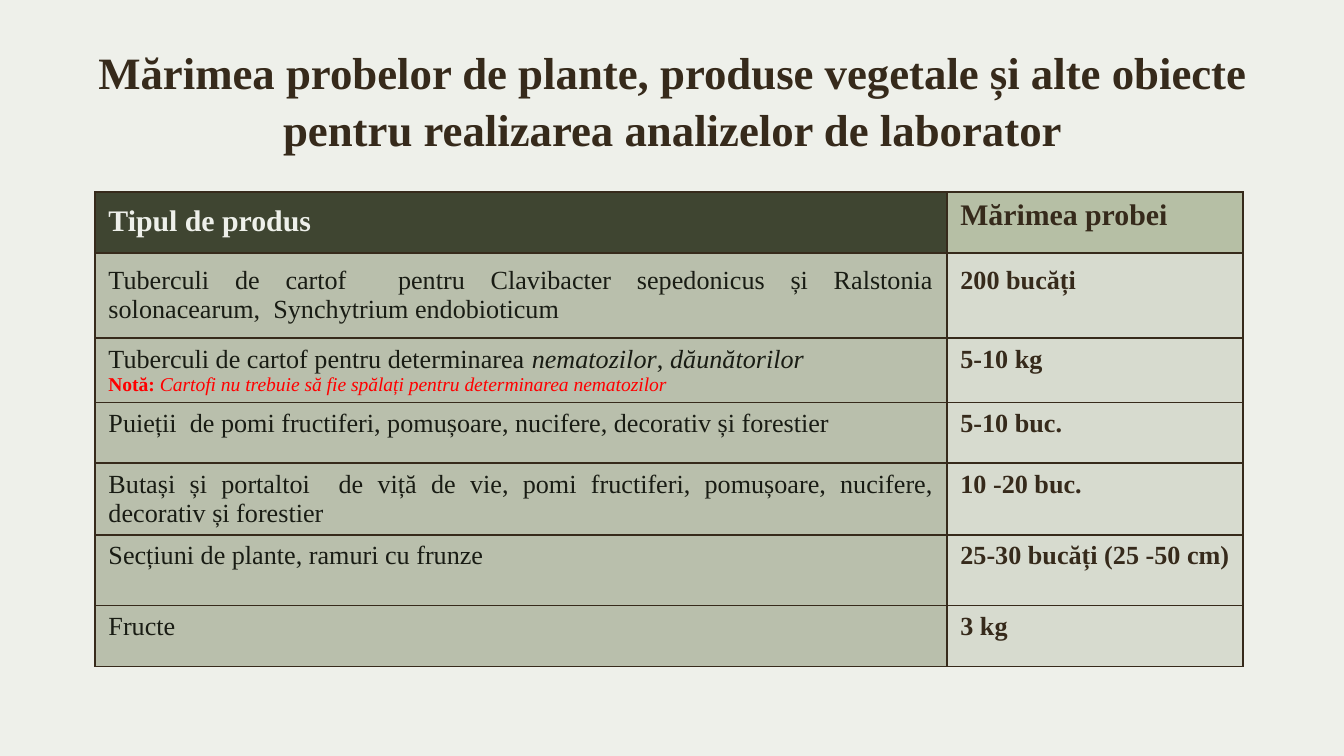
from lxml.etree import SubElement
from pptx import Presentation
from pptx.dml.color import RGBColor
from pptx.enum.text import MSO_ANCHOR as Anchor, PP_ALIGN as Align
from pptx.oxml.ns import qn
from pptx.util import Cm, Pt

FONT = "Times New Roman"
PAPER, BROWN, INK, RED = "EEF0EA", "362A1B", "191C14", "FF0000"
DARK, SAGE, OLIVE = "3F4531", "B6BFA5", "727C57"

TITLE = ("Mărimea probelor de plante, produse vegetale și alte obiecte "
         "pentru realizarea analizelor de laborator")
HEADINGS = [("Tipul de produs", PAPER, DARK, 0.25), ("Mărimea probei", BROWN, SAGE, 0.13)]
HEADING_HEIGHT = 1.15
ITALIC = {"italic": True}
NOTE = {"size": 10.5, "color": RED}

SAMPLES = [
    ([[("Tuberculi de cartof  pentru Clavibacter sepedonicus și Ralstonia "
        "solonacearum,  Synchytrium endobioticum", {})]], "200 bucăți", 1.61, 0.25),
    ([[("Tuberculi de cartof pentru determinarea ", {}), ("nematozilor", ITALIC),
       (", ", {}), ("dăunătorilor", ITALIC)],
      [("Notă: ", NOTE | {"bold": True}),
       ("Cartofi nu trebuie să fie spălați pentru determinarea nematozilor", NOTE | ITALIC)]],
     "5-10 kg", 1.21, 0.13),
    ([[("Puieții  de pomi fructiferi, pomușoare, nucifere, decorativ și forestier", {})]],
     "5-10 buc.", 1.15, 0.13),
    ([[("Butași și portaltoi  de viță de vie, pomi fructiferi, pomușoare, nucifere, "
        "decorativ și forestier", {})]], "10 -20 buc.", 1.34, 0.13),
    ([[("Secțiuni de plante, ramuri cu frunze", {})]], "25-30 bucăți (25 -50 cm)", 1.34, 0.13),
    ([[("Fructe", {})]], "3 kg", 1.15, 0.13),
]
COLUMN_WIDTHS = [16.1, 5.59]


def rgb(value):
    return RGBColor.from_string(value)


def write(paragraph, text, size=14, color=INK, bold=False, italic=False, align=Align.LEFT):
    paragraph.alignment = align
    run = paragraph.add_run()
    run.text = text
    font = run.font
    font.name, font.size, font.bold, font.italic = FONT, Pt(size), bold, italic
    font.color.rgb = rgb(color)


def style_cell(cell, color, inset, opacity=100):
    cell.margin_left = cell.margin_right = Cm(0.25)
    cell.margin_top = cell.margin_bottom = Cm(inset)
    properties = cell._tc.get_or_add_tcPr()
    for side in ("a:lnL", "a:lnR", "a:lnT", "a:lnB"):
        border = SubElement(properties, qn(side), w=str(Pt(1)))
        SubElement(SubElement(border, qn("a:solidFill")), qn("a:srgbClr"), val=BROWN)
    cell.fill.solid()
    cell.fill.fore_color.rgb = rgb(color)
    if opacity < 100:
        tint = properties.find(qn("a:solidFill")).find(qn("a:srgbClr"))
        SubElement(tint, qn("a:alpha"), val=str(opacity * 1000))


def add_title(slide):
    title = slide.shapes.title
    title.left, title.top, title.width, title.height = Cm(1.14), Cm(0.55), Cm(23.14), Cm(1.6)
    frame = title.text_frame
    frame.word_wrap = True
    frame.vertical_anchor = Anchor.TOP
    frame.margin_left = frame.margin_right = frame.margin_top = frame.margin_bottom = Cm(0.25)
    heading = frame.paragraphs[0]
    heading.line_spacing = 1.05
    write(heading, TITLE, size=24, color=BROWN, bold=True, align=Align.CENTER)


def add_samples(slide):
    heights = [HEADING_HEIGHT] + [height for _, _, height, _ in SAMPLES]
    table = slide.shapes.add_table(len(heights), len(COLUMN_WIDTHS), Cm(1.8), Cm(3.63),
                                   Cm(sum(COLUMN_WIDTHS)), Cm(sum(heights))).table
    for column, width in zip(table.columns, COLUMN_WIDTHS):
        column.width = Cm(width)
    for row, height in zip(table.rows, heights):
        row.height = Cm(height)

    for index, (text, color, fill, inset) in enumerate(HEADINGS):
        cell = table.cell(0, index)
        style_cell(cell, fill, inset)
        write(cell.text_frame.paragraphs[0], text, size=16, color=color, bold=True)

    for index, (lines, amount, _, inset) in enumerate(SAMPLES, start=1):
        product, quantity = table.cell(index, 0), table.cell(index, 1)
        style_cell(product, OLIVE, inset, opacity=42)
        style_cell(quantity, OLIVE, inset, opacity=18)
        frame = product.text_frame
        for number, line in enumerate(lines):
            paragraph = frame.add_paragraph() if number else frame.paragraphs[0]
            for text, look in line:
                write(paragraph, text, align=Align.JUSTIFY, **look)
        write(quantity.text_frame.paragraphs[0], amount, color=BROWN, bold=True)


def main():
    deck = Presentation()
    deck.slide_width, deck.slide_height = Cm(25.4), Cm(14.29)
    slide = deck.slides.add_slide(deck.slide_layouts[5])
    slide.background.fill.solid()
    slide.background.fill.fore_color.rgb = rgb(PAPER)
    add_title(slide)
    add_samples(slide)
    deck.save("out.pptx")


if __name__ == "__main__":
    main()
